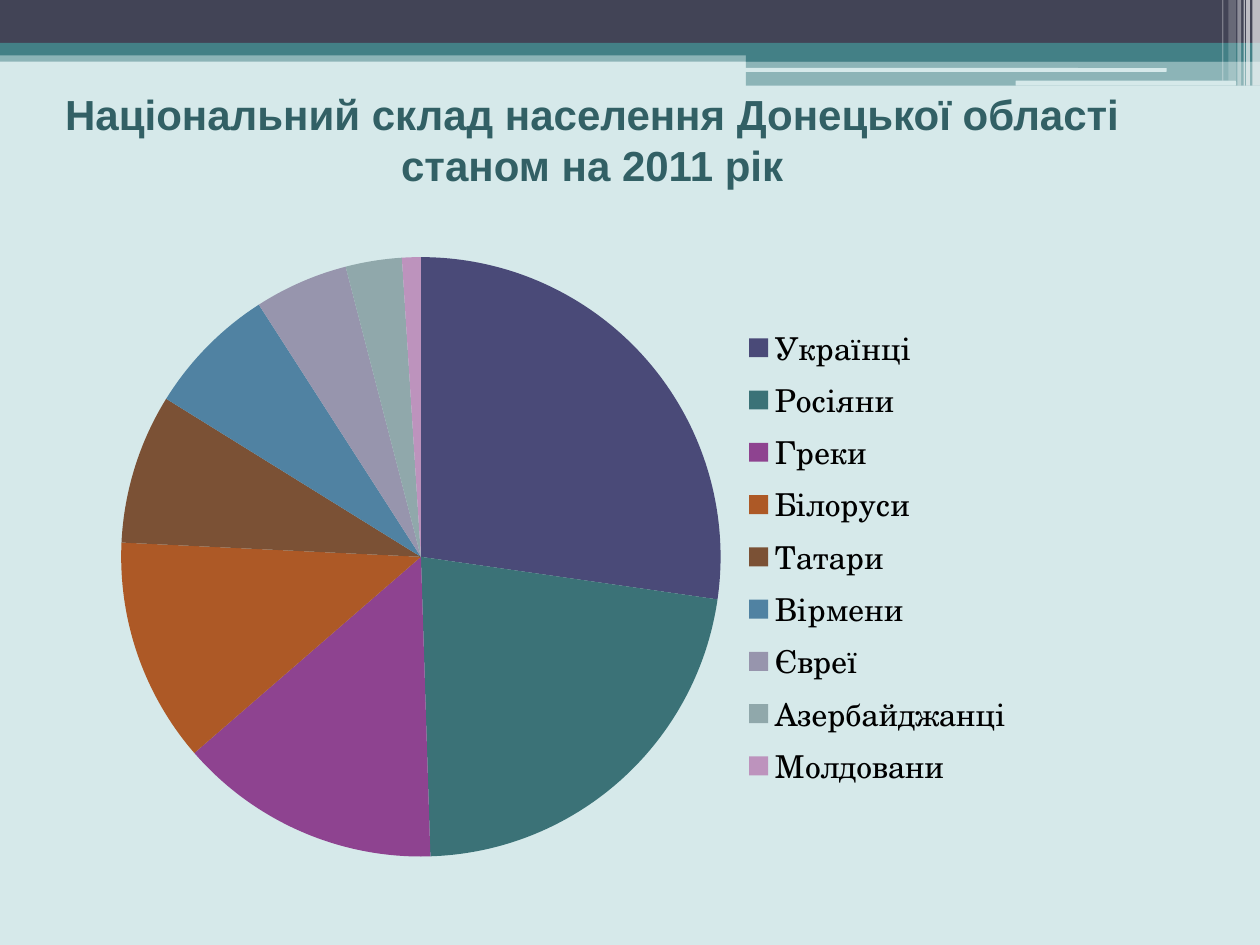
from lxml import etree
from pptx import Presentation
from pptx.chart.data import CategoryChartData
from pptx.dml.color import RGBColor
from pptx.enum.chart import XL_CHART_TYPE, XL_LEGEND_POSITION
from pptx.enum.shapes import MSO_SHAPE
from pptx.enum.text import MSO_ANCHOR, PP_ALIGN
from pptx.oxml import parse_xml
from pptx.oxml.ns import nsdecls, qn
from pptx.util import Inches, Pt

BACKGROUND, TEAL, SLATE, WHITE = "D6E9EA", "438086", "424456", "FFFFFF"
TITLE = "Національний склад населення Донецької області станом на 2011 рік"

# left, top, width, height, colour, opacity in percent
BANDS = [
    (0, 0.4, 10, 0.09, TEAL, 50),
    (0, 0, 10, 0.34, SLATE, 100),
    (0, 0.34, 10, 0.1, TEAL, 100),
    (5.92, 0.39, 4.08, 0.1, TEAL, 100),
    (5.92, 0.48, 4.08, 0.2, TEAL, 50),
]
ROUNDED_LINES = [
    (5.91, 0.54, 3.35, 0.03, BACKGROUND, 100),
    (8.06, 0.64, 1.75, 0.04, BACKGROUND, 100),
]
# left, width, height, opacity in percent
STRIPES = [
    (9.94, 0.06, 0.68, 65),
    (9.89, 0.03, 0.68, 65),
    (9.87, 0.01, 0.68, 60),
    (9.82, 0.03, 0.68, 40),
    (9.75, 0.06, 0.64, 20),
    (9.7, 0.01, 0.64, 30),
]
NATIONALITIES = [
    ("Українці", 27, "4A4A78"),
    ("Росіяни", 22, "3B7277"),
    ("Греки", 14, "8E4390"),
    ("Білоруси", 12, "AD5926"),
    ("Татари", 8, "7B5135"),
    ("Вірмени", 7, "5082A2"),
    ("Євреї", 5, "9795AD"),
    ("Азербайджанці", 3, "90A8AB"),
    ("Молдовани", 1, "BD93BD"),
]
CHART_BOX = (0.83, 1.86, 7.32, 5.12)
PIE_BOX = (0.96, 2.04, 4.76, 4.76)


def paint(fill, colour):
    fill.solid()
    fill.fore_color.rgb = RGBColor.from_string(colour)


def add_bar(slide, left, top, width, height, colour, opacity, kind=MSO_SHAPE.RECTANGLE):
    shape = slide.shapes.add_shape(kind, *map(Inches, (left, top, width, height)))
    shape.shadow.inherit = False
    shape.line.fill.background()
    paint(shape.fill, colour)
    if opacity < 100:
        colour_element = shape.fill._xPr.find(".//" + qn("a:srgbClr"))
        etree.SubElement(colour_element, qn("a:alpha"), val=str(opacity * 1000))


def add_text(slide, text, box, *, size, font, colour, bold=False, align=PP_ALIGN.LEFT):
    frame = slide.shapes.add_textbox(*map(Inches, box)).text_frame
    frame.word_wrap = True
    frame.vertical_anchor = MSO_ANCHOR.MIDDLE
    paragraph = frame.paragraphs[0]
    paragraph.alignment = align
    run = paragraph.add_run()
    run.text = text
    run.font.size, run.font.name, run.font.bold = Pt(size), font, bold
    run.font.color.rgb = RGBColor.from_string(colour)


def place_plot(chart, plot_box, chart_box):
    """Fix the inner plot area, given in slide inches, within the chart."""
    left, top, width, height = chart_box
    fractions = {
        "x": (plot_box[0] - left) / width,
        "y": (plot_box[1] - top) / height,
        "w": plot_box[2] / width,
        "h": plot_box[3] / height,
    }
    values = "".join(f'<c:{key} val="{value:.3f}"/>' for key, value in fractions.items())
    layout = parse_xml(
        f'<c:layout {nsdecls("c")}><c:manualLayout><c:layoutTarget val="inner"/>'
        f'<c:xMode val="edge"/><c:yMode val="edge"/>{values}</c:manualLayout></c:layout>'
    )
    plot_area = chart._chartSpace.chart.plotArea
    for old_layout in plot_area.findall(qn("c:layout")):
        plot_area.remove(old_layout)
    plot_area.insert(0, layout)


def add_pie(slide):
    names, shares, colours = zip(*NATIONALITIES)
    data = CategoryChartData()
    data.categories = names
    data.add_series("Series 1", shares)
    chart = slide.shapes.add_chart(
        XL_CHART_TYPE.PIE, *map(Inches, CHART_BOX), data
    ).chart
    chart.has_title = False
    chart.font.size, chart.font.name = Pt(18), "TeX Gyre Schola"
    chart.font.color.rgb = RGBColor.from_string("000000")
    chart.has_legend = True
    chart.legend.position = XL_LEGEND_POSITION.RIGHT
    chart.legend.include_in_layout = False
    plot = chart.plots[0]
    plot.vary_by_categories = True
    for index, colour in enumerate(colours):
        point = plot.series[0].points[index]
        paint(point.format.fill, colour)
        point.format.line.fill.background()
    place_plot(chart, PIE_BOX, CHART_BOX)


def main():
    presentation = Presentation()
    presentation.slide_width, presentation.slide_height = Inches(10), Inches(7.5)
    slide = presentation.slides.add_slide(presentation.slide_layouts[6])
    paint(slide.background.fill, BACKGROUND)
    for band in BANDS:
        add_bar(slide, *band)
    for line in ROUNDED_LINES:
        add_bar(slide, *line, kind=MSO_SHAPE.ROUNDED_RECTANGLE)
    for left, width, height, opacity in STRIPES:
        add_bar(slide, left, 0, width, height, WHITE, opacity)
    add_text(slide, TITLE, (0.2, 0.52, 9, 1.17), size=24, font="Arial",
             colour="326065", bold=True, align=PP_ALIGN.CENTER)
    add_pie(slide)
    presentation.save("out.pptx")


if __name__ == "__main__":
    main()
